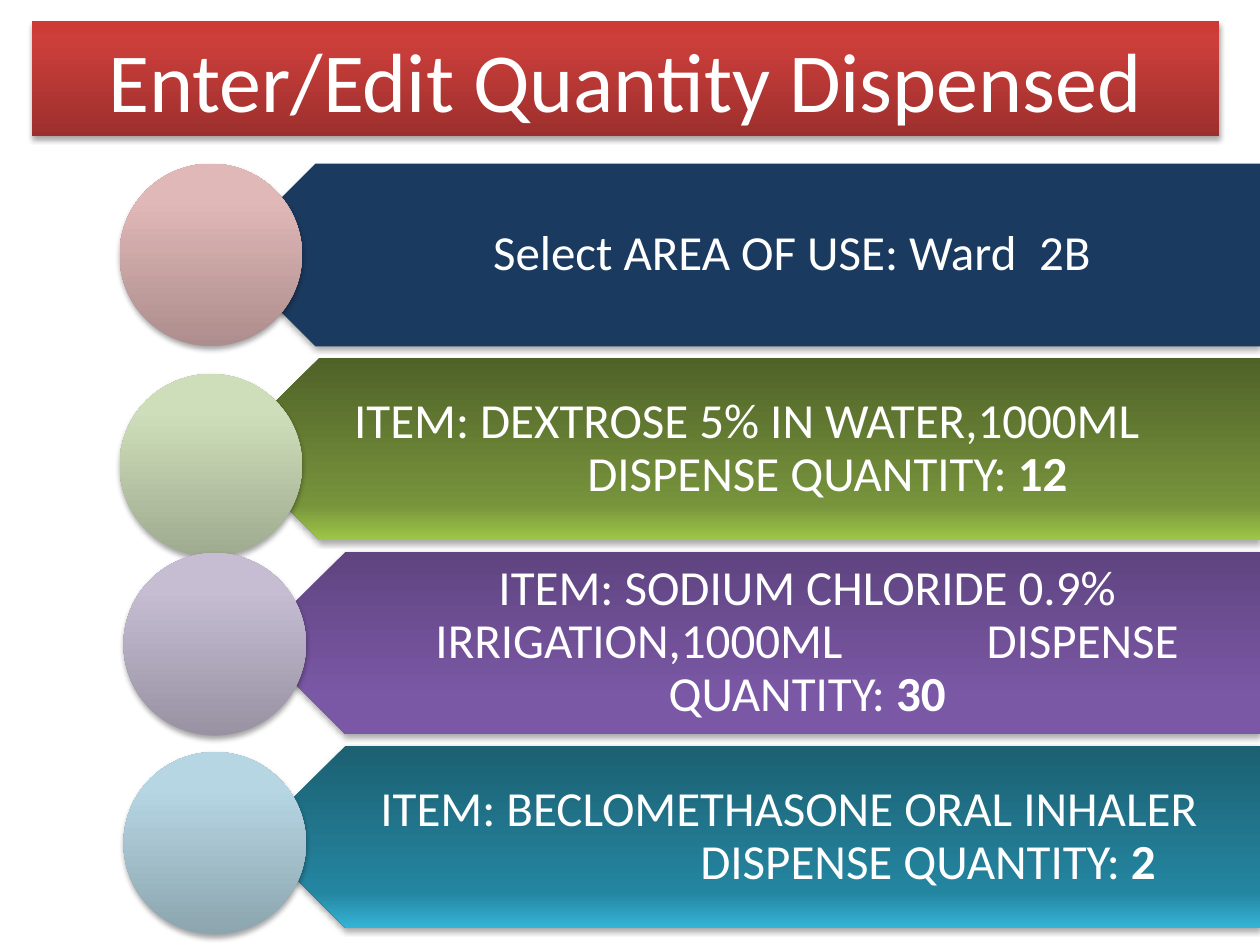
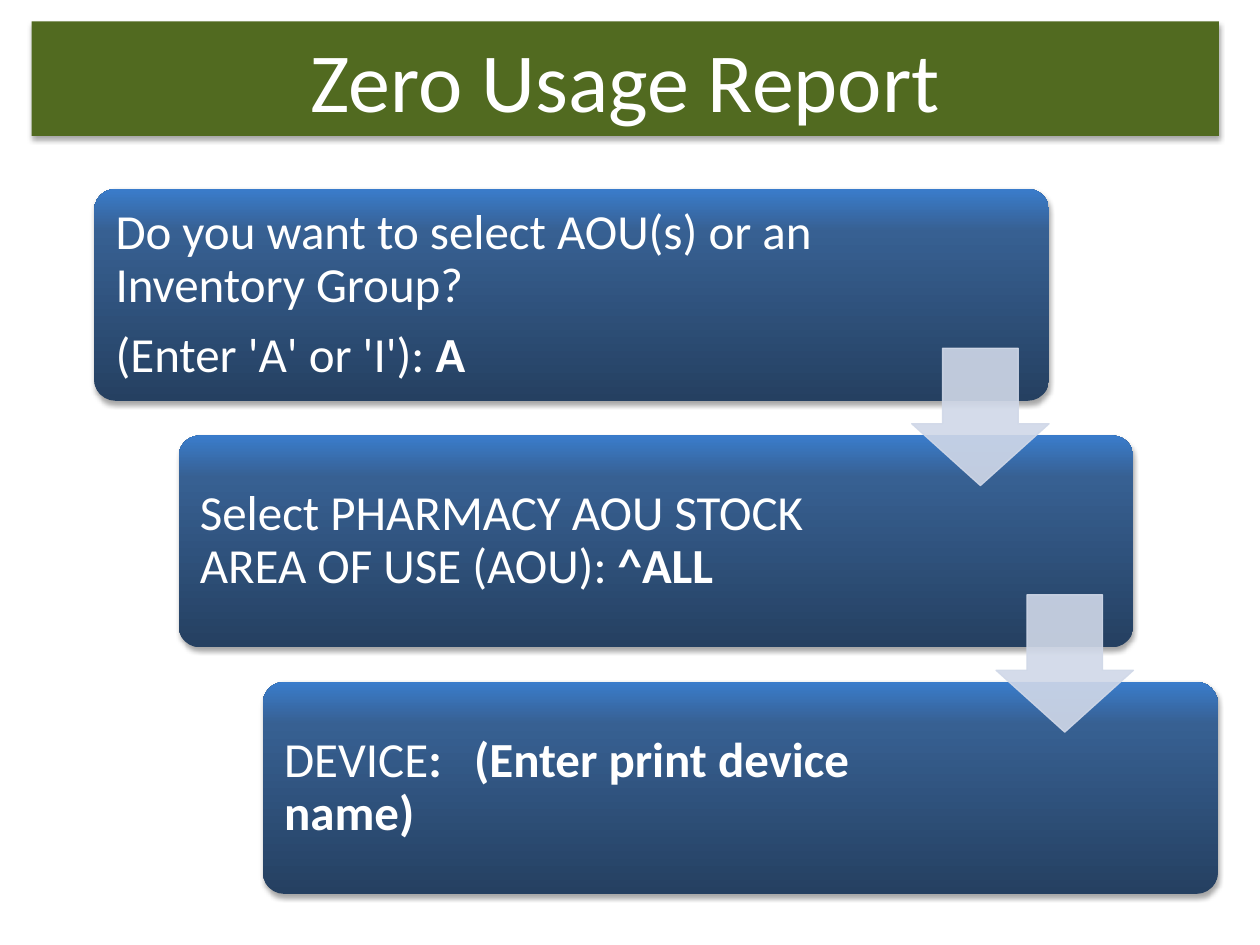
from dataclasses import dataclass

from lxml.etree import SubElement
from pptx import Presentation
from pptx.dml.color import RGBColor
from pptx.enum.shapes import MSO_SHAPE as Preset
from pptx.enum.text import MSO_ANCHOR as Anchor, MSO_AUTO_SIZE as AutoSize, PP_ALIGN as Align
from pptx.oxml.ns import qn
from pptx.util import Cm, Pt


@dataclass(frozen=True)
class Theme:
    """Gradients run from bottom to top, with stops at 0, 80 and 100 percent."""
    font: str = "Calibri"
    title_size: int = 48
    body_size: int = 28
    text: str = "FFFFFF"
    shadow: str = "000000"
    red: tuple = ("9C2F2D", "CB3E3A", "CE3B37")
    olive: str = "516A20"
    navy: str = "1B3A5F"
    green: tuple = ("4F6228", "77933C", "9DC746")
    purple: tuple = ("5F4480", "7B58A6", "7C57A8")
    teal: tuple = ("1C6072", "2485A0", "34B4D6")
    blue: tuple = ("254061", "376092", "3A7CCB")
    pale_red: tuple = ("AD8D8D", "E0B8B7", "E2B8B7")
    pale_green: tuple = ("9FAB8F", "CFDEBA", "D0DFBA")
    pale_purple: tuple = ("9892A2", "C6BDD3", "C6BED4")
    pale_teal: tuple = ("8CA5AF", "B6D6E3", "B6D7E5")
    arrow: str = "D0D8E8"


THEME = Theme()
TITLE_BOX = (0.64, 0.43, 23.93, 2.31)
SLIDE_WIDTH, SLIDE_HEIGHT = 25.4, 19.05


@dataclass(frozen=True)
class Line:
    """One paragraph: regular text, then bold text, with tab stops in cm."""
    regular: str
    bold: str = ""
    stops: tuple = ()


def cm_box(box):
    return [Cm(length) for length in box]


def paint(shape, colour):
    """Fill with one colour, or with a vertical gradient for a tuple."""
    if isinstance(colour, str):
        shape.fill.solid()
        shape.fill.fore_color.rgb = RGBColor.from_string(colour)
        return
    shape.fill.gradient()
    shape.fill.gradient_angle = 90
    stops = shape.element.spPr.find(qn("a:gradFill")).find(qn("a:gsLst"))
    for stop in list(stops):
        stops.remove(stop)
    for percent, value in zip((0, 80, 100), colour):
        stop = SubElement(stops, qn("a:gs"), pos=str(percent * 1000))
        SubElement(stop, qn("a:srgbClr"), val=value)


def cast_shadow(shape):
    shape.shadow.inherit = False
    effects = shape.element.spPr.find(qn("a:effectLst"))
    shadow = SubElement(effects, qn("a:outerShdw"), blurRad=str(Pt(3.1)),
                        dist=str(Pt(1.8)), dir="5400000", rotWithShape="0")
    colour = SubElement(shadow, qn("a:srgbClr"), val=THEME.shadow)
    SubElement(colour, qn("a:alpha"), val="35000")


def add_raised(slide, preset, box, colour):
    shape = slide.shapes.add_shape(preset, *cm_box(box))
    paint(shape, colour)
    shape.line.fill.background()
    cast_shadow(shape)
    return shape


def style_run(run, size, bold=False):
    run.font.name = THEME.font
    run.font.size = Pt(size)
    run.font.bold = bold
    run.font.color.rgb = RGBColor.from_string(THEME.text)


def add_lines(slide, box, lines, insets, gap=0):
    frame = slide.shapes.add_textbox(*cm_box(box)).text_frame
    frame.word_wrap = True
    frame.vertical_anchor = Anchor.MIDDLE
    (frame.margin_left, frame.margin_top,
     frame.margin_right, frame.margin_bottom) = cm_box(insets)
    for index, line in enumerate(lines):
        paragraph = frame.add_paragraph() if index else frame.paragraphs[0]
        paragraph.alignment = Align.LEFT
        paragraph.line_spacing = 0.9
        paragraph.space_before = Pt(gap if index else 0)
        for text, bold in ((line.regular, False), (line.bold, True)):
            if text:
                run = paragraph.add_run()
                run.text = text
                style_run(run, THEME.body_size, bold)
        if line.stops:
            tabs = SubElement(paragraph._p.get_or_add_pPr(), qn("a:tabLst"))
            for stop in line.stops:
                SubElement(tabs, qn("a:tab"), pos=str(Cm(stop)), algn="l")


def add_titled_slide(deck, heading, colour):
    slide = deck.slides.add_slide(deck.slide_layouts[5])
    title = slide.shapes.title
    title.left, title.top, title.width, title.height = cm_box(TITLE_BOX)
    paint(title, colour)
    cast_shadow(title)
    frame = title.text_frame
    frame.text = heading
    frame.auto_size = AutoSize.NONE
    frame.vertical_anchor = Anchor.MIDDLE
    frame.paragraphs[0].alignment = Align.CENTER
    style_run(frame.paragraphs[0].runs[0], THEME.title_size)
    return slide


def add_entry(slide, box, colour, lines, circle_at, circle_colour):
    """Place a left-pointing bar with its text and the circle at its tip."""
    left, top, width, height = box
    text_shift = 0.91
    add_raised(slide, Preset.PENTAGON, box, colour).rotation = 180
    add_lines(slide, (left + text_shift, top, width - text_shift, height),
              lines, (1.63, 0.3, 0.56, 0.3))
    add_raised(slide, Preset.OVAL, (*circle_at, height, height), circle_colour)


def build_quantity_slide(deck):
    slide = add_titled_slide(deck, "Enter/Edit Quantity Dispensed", THEME.red)
    dispense = "\tDISPENSE QUANTITY: "
    entries = (
        (4.52, THEME.navy, (2.41, 3.3), THEME.pale_red,
         [Line("\tSelect AREA OF USE: Ward\t2B", stops=(2.88, 13.89))]),
        (4.6, THEME.green, (2.41, 7.54), THEME.pale_green,
         [Line("ITEM: DEXTROSE 5% IN WATER,1000ML"),
          Line(dispense, "12", (4.7,))]),
        (5.13, THEME.purple, (2.49, 11.15), THEME.pale_purple,
         [Line("\tITEM: SODIUM CHLORIDE 0.9%", stops=(2.38,)),
          Line("\tIRRIGATION,1000ML\tDISPENSE", stops=(1.11, 12.22)),
          Line("\tQUANTITY: ", "30", (5.81,))]),
        (5.13, THEME.teal, (2.49, 15.16), THEME.pale_teal,
         [Line("ITEM: BECLOMETHASONE ORAL INHALER"),
          Line(dispense, "2", (6.45,))]),
    )
    first_top, pitch, height = 3.3, 3.91, 3.68
    for index, (left, colour, circle_at, circle_colour, lines) in enumerate(entries):
        box = (left, first_top + index * pitch, SLIDE_WIDTH - left, height)
        add_entry(slide, box, colour, lines, circle_at, circle_colour)


def add_step(slide, box, lines, text_width):
    left, top, _, height = box
    inset = 0.13
    card = add_raised(slide, Preset.ROUNDED_RECTANGLE, box, THEME.blue)
    card.adjustments[0] = 0.1
    add_lines(slide, (left + inset, top + inset, text_width, height - 2 * inset),
              lines, (0.3,) * 4, gap=9.8)


def add_step_arrow(slide, box):
    """Place the arrow that leads from the step in this box to the next."""
    left, top, width, _ = box
    size = 2.77
    arrow = slide.shapes.add_shape(
        Preset.DOWN_ARROW, *cm_box((left + width - size, top + 3.21, size, size)))
    arrow.adjustments[0], arrow.adjustments[1] = 0.55, 0.45
    arrow.shadow.inherit = False
    paint(arrow, THEME.arrow)
    paint(arrow.line, THEME.arrow)
    arrow.line.width = Pt(0.75)
    for colour in arrow.element.spPr.iter(qn("a:srgbClr")):
        SubElement(colour, qn("a:alpha"), val="90000")


def build_report_slide(deck):
    slide = add_titled_slide(deck, "Zero Usage Report", THEME.olive)
    steps = (
        (14.66, [Line("Do you want to select AOU(s) or an Inventory Group?"),
                 Line("(Enter 'A' or 'I'): ", "A")]),
        (14.53, [Line("Select PHARMACY AOU STOCK AREA OF USE (AOU): ", "^ALL")]),
        (14.53, [Line("DEVICE", ":\t(Enter print device name)", (3.83,))]),
    )
    boxes = [(1.9 + 1.7 * index, 3.81 + 4.97 * index, 19.25, 4.27)
             for index in range(len(steps))]
    for box, (text_width, lines) in zip(boxes, steps):
        add_step(slide, box, lines, text_width)
    for box in boxes[:-1]:
        add_step_arrow(slide, box)


def main():
    deck = Presentation()
    deck.slide_width, deck.slide_height = Cm(SLIDE_WIDTH), Cm(SLIDE_HEIGHT)
    build_quantity_slide(deck)
    build_report_slide(deck)
    deck.save("out.pptx")


if __name__ == "__main__":
    main()
